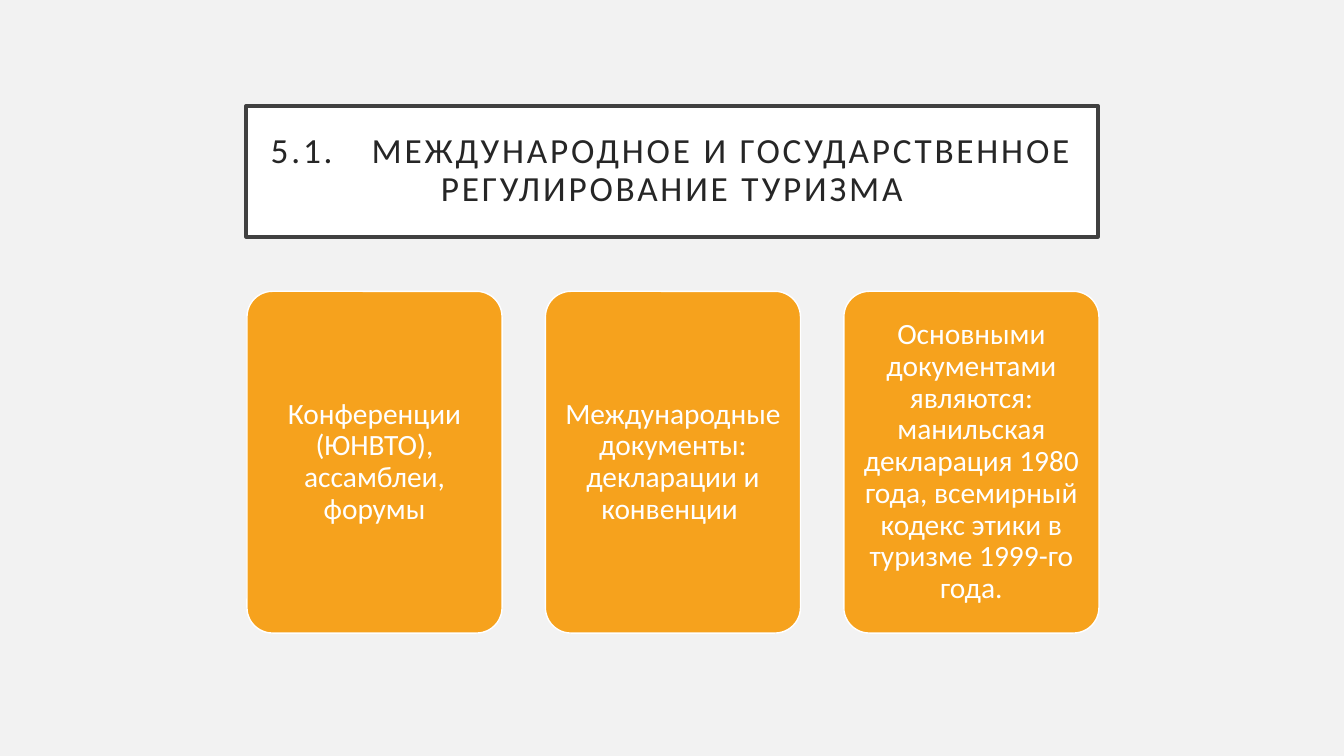
import pptx
import pptx.dml.color
import pptx.enum.shapes
import pptx.enum.text
import pptx.util

Inches = pptx.util.Inches
Pt = pptx.util.Pt
SHAPE = pptx.enum.shapes.MSO_SHAPE

TITLE = "5.1.\tМЕЖДУНАРОДНОЕ И ГОСУДАРСТВЕННОЕ РЕГУЛИРОВАНИЕ ТУРИЗМА"
CARDS = [
    "Конференции (ЮНВТО), ассамблеи, форумы",
    "Международные документы: декларации и конвенции ",
    "Основными документами являются: манильская декларация 1980 года, "
    "всемирный кодекс этики в туризме 1999-го года.",
]
CARD_LEFT, CARD_TOP, CARD_WIDTH, CARD_HEIGHT = 2.45, 2.89, 2.53, 3.39
CARD_GAP = 0.43


def rgb(value):
    return pptx.dml.color.RGBColor.from_string(value)


class Deck:
    font = "Calibri"
    background = "F2F2F2"

    def __init__(self, prs):
        self.slide = prs.slides.add_slide(prs.slide_layouts[6])
        fill = self.slide.background.fill
        fill.solid()
        fill.fore_color.rgb = rgb(self.background)

    def box(self, kind, left, top, width, height, fill, line, line_width):
        sp = self.slide.shapes.add_shape(
            kind, Inches(left), Inches(top), Inches(width), Inches(height))
        sp.shadow.inherit = False
        sp.fill.solid()
        sp.fill.fore_color.rgb = rgb(fill)
        sp.line.color.rgb = rgb(line)
        sp.line.width = Pt(line_width)
        return sp

    def label(self, sp, text, size, color, inset):
        """Set centred text in a shape and return its run."""
        tf = sp.text_frame
        tf.word_wrap = True
        tf.vertical_anchor = pptx.enum.text.MSO_ANCHOR.MIDDLE
        tf.margin_left = tf.margin_right = Inches(inset)
        tf.margin_top = tf.margin_bottom = Inches(inset)
        p = tf.paragraphs[0]
        p.text = text
        p.alignment = pptx.enum.text.PP_ALIGN.CENTER
        p.line_spacing = 0.9
        r = p.runs[0]
        r.font.name = self.font
        r.font.size = Pt(size)
        r.font.color.rgb = rgb(color)
        return r

    def title(self, text):
        sp = self.box(SHAPE.RECTANGLE, 2.44, 1.05, 8.45, 1.3,
                      "FFFFFF", "404040", 2.5)
        r = self.label(sp, text, 25.2, "262626", 0.2)
        r.font._element.set("spc", "200")

    def card(self, left, text):
        sp = self.box(SHAPE.ROUNDED_RECTANGLE, left, CARD_TOP, CARD_WIDTH,
                      CARD_HEIGHT, "F6A21D", "FFFFFF", 1)
        sp.adjustments[0] = 0.1
        self.label(sp, text, 21, "FFFFFF", 0.09)


def main():
    prs = pptx.Presentation()
    prs.slide_width = Inches(13.33)
    prs.slide_height = Inches(7.5)
    deck = Deck(prs)
    deck.title(TITLE)
    for i, text in enumerate(CARDS):
        deck.card(CARD_LEFT + i * (CARD_WIDTH + CARD_GAP), text)
    prs.save("out.pptx")


if __name__ == "__main__":
    main()
